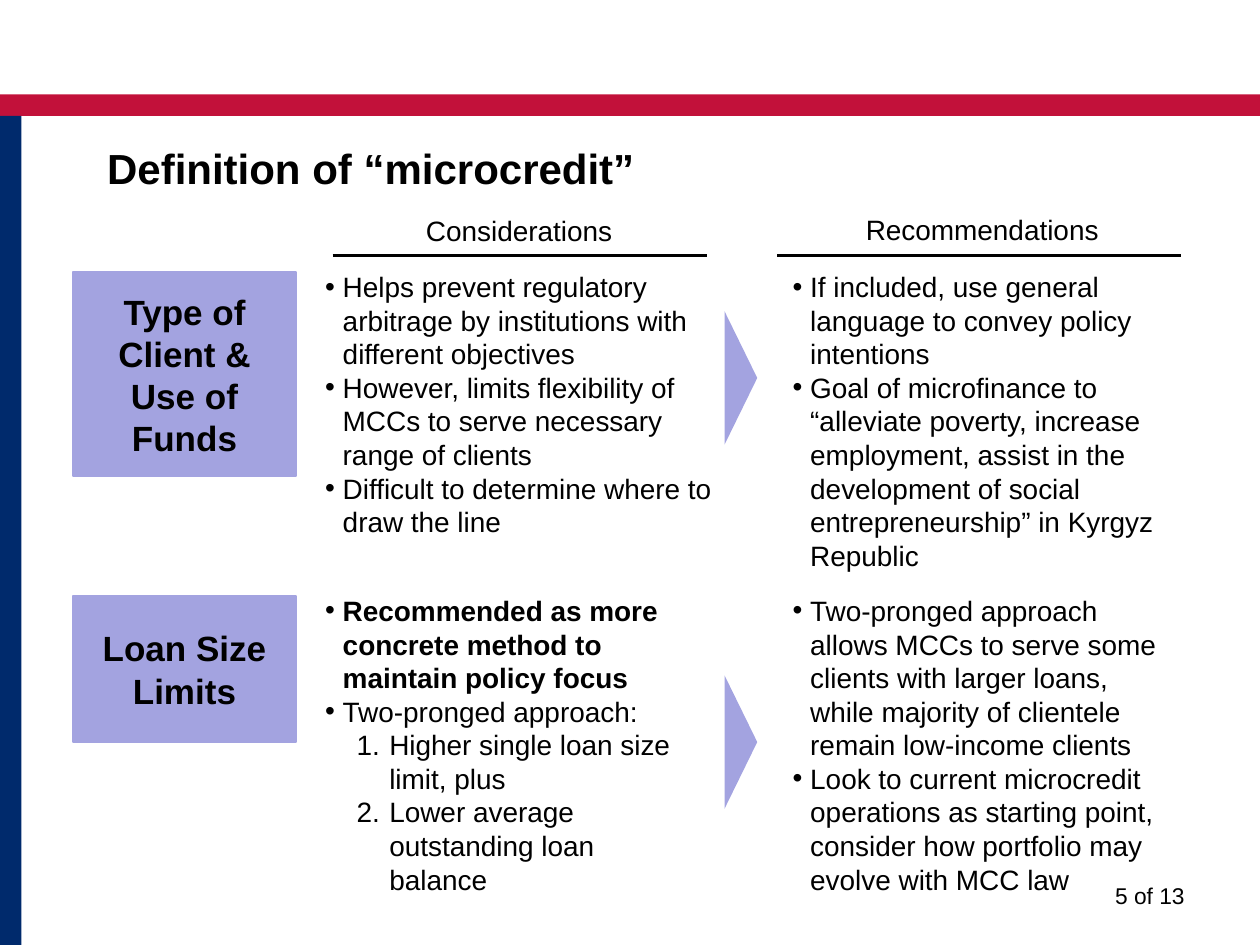
from lxml import etree
from pptx import Presentation
from pptx import util as u
from pptx.dml.color import RGBColor
from pptx.enum import shapes, text
from pptx.oxml import ns

RED, NAVY, LILAC, BLACK = "C2113A", "002A6C", "A3A3E0", "000000"
BULLET, NUMBER = "buChar", "buAutoNum"
ALIGN, ANCHOR = text.PP_ALIGN, text.MSO_ANCHOR

presentation = Presentation()
presentation.slide_width, presentation.slide_height = u.Inches(10), u.Inches(7.5)
slide = presentation.slides.add_slide(presentation.slide_layouts.get_by_name("Comparison"))


def add_block(kind, left, top, width, height, color):
    shape = slide.shapes.add_shape(kind, *map(u.Inches, (left, top, width, height)))
    shape.shadow.inherit = False
    shape.fill.solid()
    shape.fill.fore_color.rgb = RGBColor.from_string(color)
    shape.line.fill.background()
    return shape


def write(shape, *lines, size=16, color=BLACK, bold=False, align=ALIGN.LEFT,
          anchor=ANCHOR.TOP, side=0.1):
    """Each line is plain text, or a tuple of text, list marker and bold."""
    frame = shape.text_frame
    frame.word_wrap = True
    frame.auto_size = text.MSO_AUTO_SIZE.NONE
    frame.vertical_anchor = anchor
    frame.margin_left = frame.margin_right = u.Inches(side)
    frame.margin_top = frame.margin_bottom = u.Inches(0.05)
    for index, line in enumerate(lines):
        words, marker, strong = (line, None, bold) if isinstance(line, str) else line
        paragraph = frame.paragraphs[0] if index == 0 else frame.add_paragraph()
        paragraph.alignment = align
        paragraph.space_before = u.Pt(0)
        if marker:
            paragraph.level = 1 if marker == NUMBER else 0
            indent, hang = (0.51, 0.26) if marker == NUMBER else (0.14, 0.14)
            properties = paragraph._p.get_or_add_pPr()
            properties.set("marL", str(u.Inches(indent)))
            properties.set("indent", str(-u.Inches(hang)))
            etree.SubElement(properties, ns.qn("a:buFont"), typeface="Arial")
            style = {"type": "arabicPeriod"} if marker == NUMBER else {"char": "•"}
            etree.SubElement(properties, ns.qn("a:" + marker), **style)
        run = paragraph.add_run()
        run.text = words
        run.font.name, run.font.size, run.font.bold = "Arial", u.Pt(size), strong
        run.font.color.rgb = RGBColor.from_string(color)


# Frame bars and title
rectangle = shapes.MSO_SHAPE.RECTANGLE
add_block(rectangle, 0, 0.75, 10, 0.17, RED)
add_block(rectangle, 0, 0.92, 0.17, 6.58, NAVY)
title = slide.shapes.title
title.left, title.top, title.width, title.height = map(u.Inches, (0.75, 1.08, 8.5, 0.67))
write(title, "Definition of “microcredit”", size=24, bold=True)

# Column headings, each above a rule
headings = [
    ("Considerations", 2.62, 1.64, 3, 2.64, 5.61),
    ("Recommendations", 6, 1.63, 3.59, 6.17, 9.37),
]
for heading, left, top, width, start, end in headings:
    box = slide.shapes.add_textbox(*map(u.Inches, (left, top, width, 0.37)))
    write(box, heading, align=ALIGN.CENTER, anchor=ANCHOR.BOTTOM, side=0)
    rule = slide.shapes.add_connector(
        shapes.MSO_CONNECTOR.STRAIGHT, *map(u.Inches, (start, 2.03, end, 2.03)))
    rule.line.width = u.Pt(1.5)
    rule.line.color.rgb = RGBColor.from_string(BLACK)
    etree.SubElement(rule._element.spPr, ns.qn("a:effectLst"))

# Rows: label, label top and height, arrow top, list top, then lists with their widths
rows = [
    ("Type of Client & Use of Funds", 2.16, 1.62, 2.87, 2.09, [
        (3.44, [
            ("Helps prevent regulatory arbitrage by institutions with different objectives",
             BULLET, False),
            ("However, limits flexibility of MCCs to serve necessary range of clients",
             BULLET, False),
            ("Difficult to determine where to draw the line", BULLET, False)]),
        (3.31, [
            ("If included, use general language to convey policy intentions", BULLET, False),
            ("Goal of microfinance to “alleviate poverty, increase employment, assist in the "
             "development of social entrepreneurship” in Kyrgyz Republic", BULLET, False)]),
    ]),
    ("Loan Size Limits", 4.73, 1.16, 5.76, 4.66, [
        (3.13, [
            ("Recommended as more concrete method to maintain policy focus", BULLET, True),
            ("Two-pronged approach:", BULLET, False),
            ("Higher single loan size limit, plus", NUMBER, False),
            ("Lower average outstanding loan balance", NUMBER, False)]),
        (3.17, [
            ("Two-pronged approach allows MCCs to serve some clients with larger loans, while "
             "majority of clientele remain low-income clients", BULLET, False),
            ("Look to current microcredit operations as starting point, consider how portfolio "
             "may evolve with MCC law", BULLET, False)]),
    ]),
]
bodies = iter([item for item in slide.placeholders if item.placeholder_format.idx in range(1, 5)])
for label, label_top, label_height, arrow_top, list_top, lists in rows:
    block = add_block(rectangle, 0.58, label_top, 1.77, label_height, LILAC)
    block.line.color.rgb = RGBColor.from_string(LILAC)
    block.line.width = u.Pt(1)
    write(block, label, size=20, bold=True, align=ALIGN.CENTER, anchor=ANCHOR.MIDDLE)
    arrow = add_block(shapes.MSO_SHAPE.ISOSCELES_TRIANGLE, 5.35, arrow_top, 1.06, 0.26, LILAC)
    arrow.rotation = 90
    for left, (width, lines) in zip((2.48, 6.19), lists):
        body = next(bodies)
        body.left, body.top, body.width, body.height = map(
            u.Inches, (left, list_top, width, 1.34))
        write(body, *lines)

page = slide.shapes.add_textbox(*map(u.Inches, (7.17, 6.95, 2.33, 0.4)))
write(page, "5 of 13", size=13, align=ALIGN.RIGHT)

presentation.save("out.pptx")
